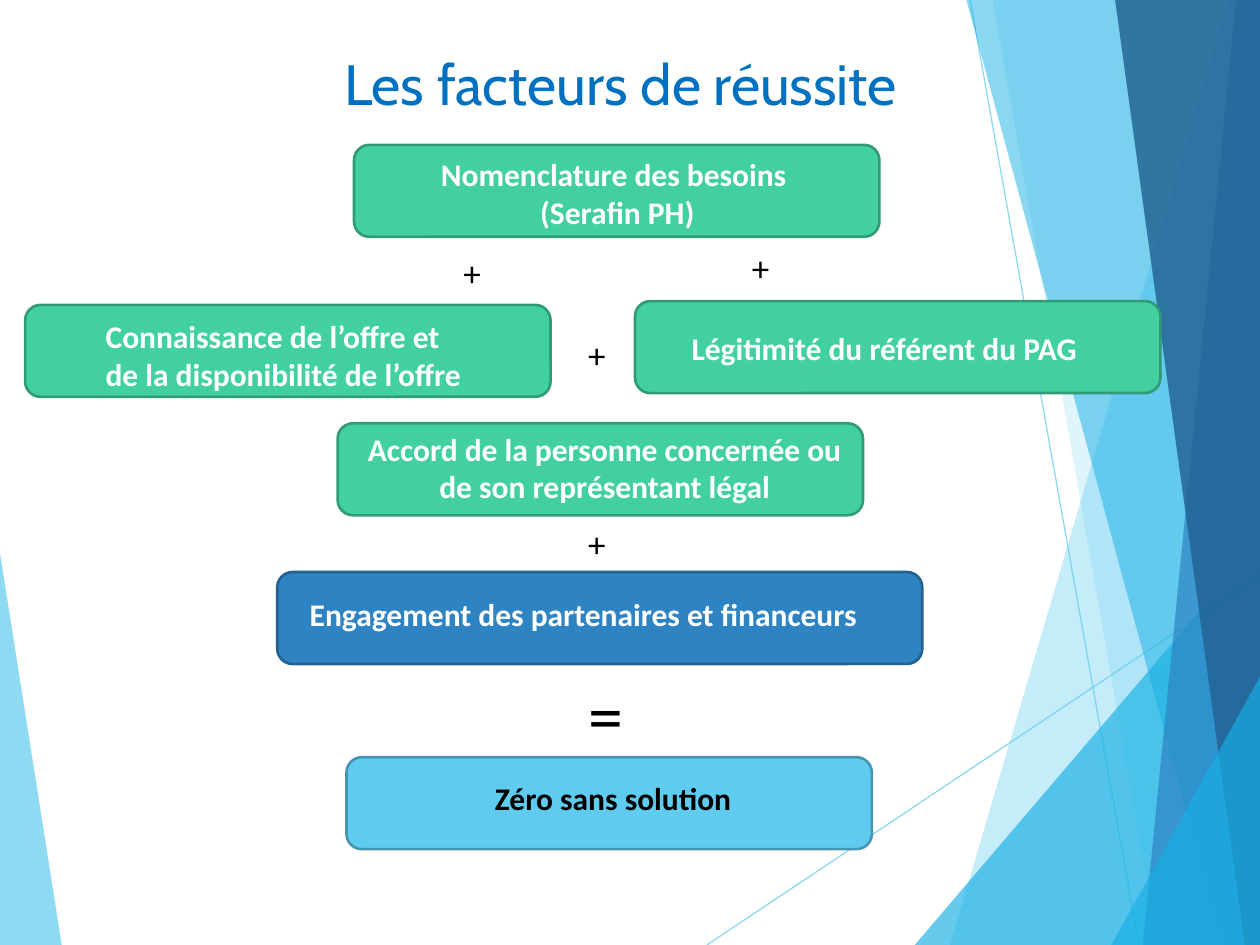
import pptx
import pptx.dml.color
import pptx.enum.shapes
import pptx.enum.text
import pptx.oxml
import pptx.oxml.ns
import pptx.util
from dataclasses import dataclass

Inches = pptx.util.Inches
Pt = pptx.util.Pt
Align = pptx.enum.text.PP_ALIGN
Anchor = pptx.enum.text.MSO_ANCHOR


@dataclass(frozen=True)
class Theme:
    title_font: str = "Cabin"
    body_font: str = "Calibri"
    title_size: float = 32.4
    body_size: float = 18
    plus_size: float = 20
    equals_size: float = 40
    title: str = "0070C0"
    white: str = "FFFFFF"
    black: str = "000000"
    green: str = "42D0A2"
    green_line: str = "319A78"
    blue: str = "2E83C3"
    blue_line: str = "226190"
    sky: str = "5FCBEF"
    sky_line: str = "4696B1"
    cyan: str = "17B0E4"
    navy: str = "226292"


def rgb(color):
    return pptx.dml.color.RGBColor.from_string(color)


def set_opacity(fill_element, percent):
    color = fill_element.find(".//" + pptx.oxml.ns.qn("a:srgbClr"))
    alpha = pptx.oxml.parse_xml(
        f'<a:alpha {pptx.oxml.ns.nsdecls("a")} val="{percent * 1000}"/>')
    color.append(alpha)


class SlideBuilder:
    def __init__(self, slide, theme):
        self.slide = slide
        self.theme = theme

    def facet(self, points, color, opacity):
        corners = [(Inches(x), Inches(y)) for x, y in points]
        builder = self.slide.shapes.build_freeform(*corners[0], scale=1.0)
        builder.add_line_segments(corners[1:], close=True)
        shape = builder.convert_to_shape()
        shape.shadow.inherit = False
        shape.fill.solid()
        shape.fill.fore_color.rgb = rgb(color)
        shape.line.fill.background()
        set_opacity(shape._element.spPr.find(pptx.oxml.ns.qn("a:solidFill")), opacity)

    def line(self, start, end, color, opacity):
        connector = self.slide.shapes.add_connector(
            pptx.enum.shapes.MSO_CONNECTOR.STRAIGHT,
            *(Inches(value) for value in (*start, *end)))
        connector.line.color.rgb = rgb(color)
        connector.line.width = Pt(0.75)
        properties = connector._element.spPr
        set_opacity(properties.find(pptx.oxml.ns.qn("a:ln")), opacity)
        properties.append(pptx.oxml.parse_xml(
            f'<a:effectLst {pptx.oxml.ns.nsdecls("a")}/>'))

    def box(self, left, top, fill, outline, width=4.17, height=0.73):
        shape = self.slide.shapes.add_shape(
            pptx.enum.shapes.MSO_SHAPE.ROUNDED_RECTANGLE,
            *(Inches(value) for value in (left, top, width, height)))
        shape.shadow.inherit = False
        shape.fill.solid()
        shape.fill.fore_color.rgb = rgb(fill)
        shape.line.color.rgb = rgb(outline)
        shape.line.width = Pt(1.5)

    def text(self, left, top, width, height, lines, color, size=None, font=None,
             bold=False, align=Align.LEFT, anchor=Anchor.TOP):
        text_box = self.slide.shapes.add_textbox(
            *(Inches(value) for value in (left, top, width, height)))
        frame = text_box.text_frame
        frame.word_wrap = True
        frame.vertical_anchor = anchor
        frame.text = "\n".join(lines)
        for paragraph in frame.paragraphs:
            paragraph.alignment = align
            paragraph.font.name = font or self.theme.body_font
            paragraph.font.size = Pt(size or self.theme.body_size)
            paragraph.font.bold = bold
            paragraph.font.color.rgb = rgb(color)


def main():
    presentation = pptx.Presentation()
    presentation.slide_width = Inches(10)
    presentation.slide_height = Inches(7.5)
    theme = Theme()
    slide = presentation.slides.add_slide(presentation.slide_layouts[6])
    builder = SlideBuilder(slide, theme)

    # Background facets and thin lines
    builder.facet([(0, 4.39), (0.49, 7.5), (0, 7.5)], theme.sky, 70)
    builder.line((5.61, 7.5), (10, 4.57), theme.sky, 70)
    builder.line((7.7, 0), (9.04, 7.5), theme.sky, 70)
    facets = [
        ([(9.75, 0), (7.54, 7.5), (10, 7.5), (10, 0)], theme.sky, 36),
        ([(7.88, 0), (9.19, 7.5), (10, 7.5), (10, 0)], theme.sky, 20),
        ([(7.26, 7.5), (10, 4.29), (10, 7.5)], theme.cyan, 66),
        ([(7.67, 0), (9.7, 7.5), (10, 7.5), (10, 0)], theme.cyan, 50),
        ([(9.81, 0), (9.07, 7.5), (10, 7.5), (10, 0)], theme.blue, 70),
        ([(8.85, 0), (9.88, 7.5), (10, 7.5), (10, 0)], theme.navy, 82),
        ([(8.82, 7.5), (10, 5.37), (10, 7.5)], theme.cyan, 66),
    ]
    for points, color, opacity in facets:
        builder.facet(points, color, opacity)

    # Title
    builder.text(0.81, 0.36, 8.23, 0.6, ["Les facteurs de réussite"], theme.title,
                 size=theme.title_size, font=theme.title_font,
                 align=Align.CENTER, anchor=Anchor.MIDDLE)

    # Boxes: four factors, the commitment and the result
    for left, top in [(2.81, 1.15), (0.2, 2.42), (5.04, 2.39), (2.68, 3.36)]:
        builder.box(left, top, theme.green, theme.green_line)
    builder.box(2.2, 4.54, theme.blue, theme.blue_line, width=5.12)
    builder.box(2.75, 6.01, theme.sky, theme.sky_line)

    # Labels
    labels = [
        (2.95, 1.18, 3.9, 0.71, ["Nomenclature des besoins ", "(Serafin PH)"],
         theme.white, Align.CENTER),
        (0.74, 2.47, 3.07, 0.71,
         ["Connaissance de l’offre et de la disponibilité de l’offre"],
         theme.white, Align.LEFT),
        (5.39, 2.56, 3.48, 0.4, ["Légitimité du référent du PAG"],
         theme.white, Align.LEFT),
        (2.68, 3.36, 4.24, 0.71,
         ["Accord de la personne concernée ou de son représentant légal"],
         theme.white, Align.CENTER),
        (2.36, 4.67, 4.88, 0.4, ["Engagement des partenaires et financeurs"],
         theme.white, Align.LEFT),
        (3.83, 6.13, 2.28, 0.4, ["Zéro sans solution"], theme.black, Align.LEFT),
    ]
    for left, top, width, height, lines, color, align in labels:
        builder.text(left, top, width, height, lines, color, bold=True, align=align)

    # Operators
    for left, top in [(3.58, 1.95), (4.57, 2.6), (5.87, 1.91), (4.57, 4.1)]:
        builder.text(left, top, 0.47, 0.44, ["+"], theme.black, size=theme.plus_size)
    builder.text(4.57, 5.28, 0.39, 0.77, ["="], theme.black, size=theme.equals_size)

    presentation.save("out.pptx")


if __name__ == "__main__":
    main()
